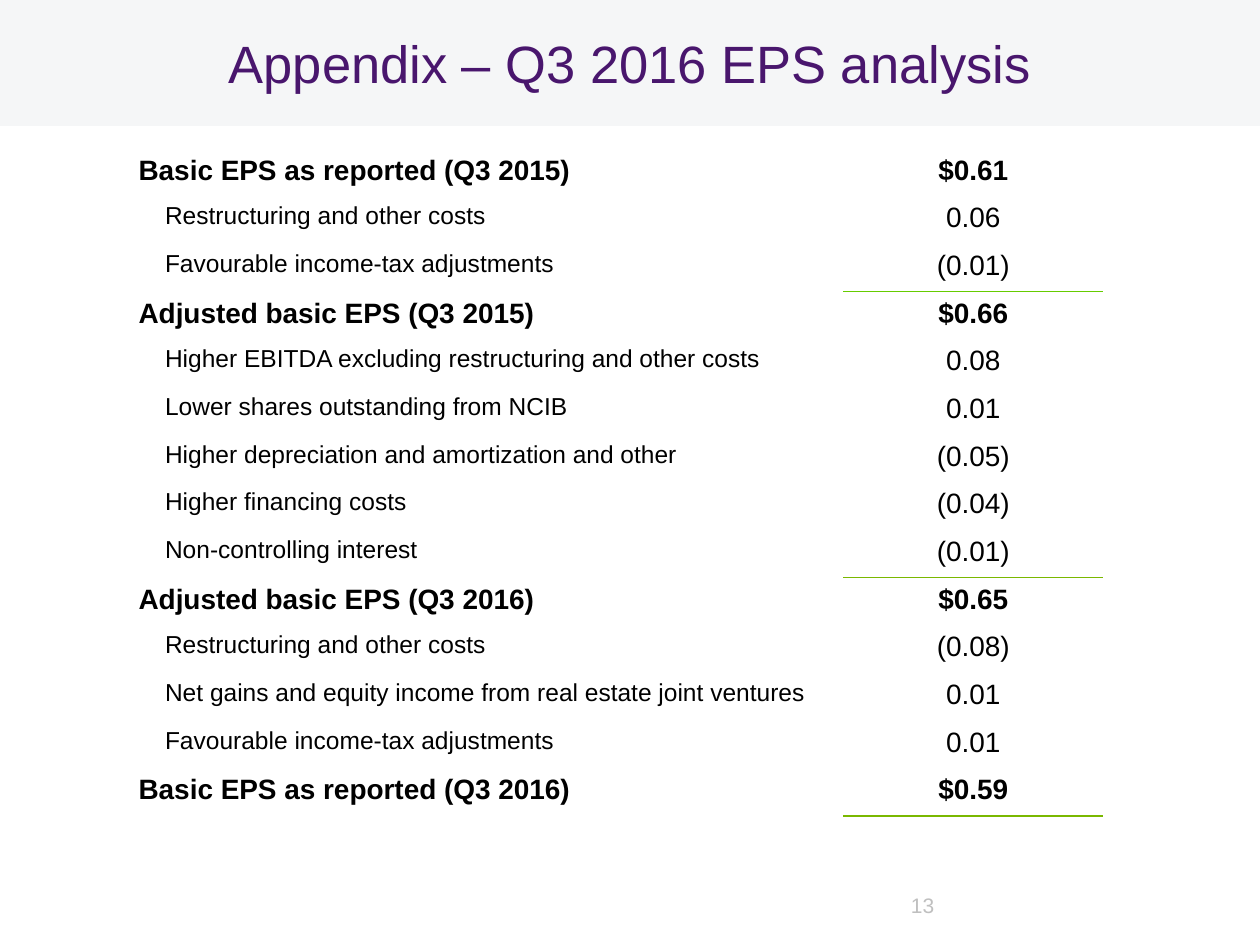
from lxml import etree
from pptx import Presentation
from pptx.dml.color import RGBColor
from pptx.enum.shapes import MSO_SHAPE
from pptx.enum.text import MSO_ANCHOR, PP_ALIGN
from pptx.oxml.ns import qn
from pptx.util import Inches, Pt

RECT = MSO_SHAPE.RECTANGLE
MIDDLE = MSO_ANCHOR.MIDDLE
LEFT, CENTER = PP_ALIGN.LEFT, PP_ALIGN.CENTER

ROWS = [
    ("Basic EPS as reported (Q3 2015)", "$0.61", True),
    ("Restructuring and other costs", "0.06", False),
    ("Favourable income-tax adjustments", "(0.01)", False),
    ("Adjusted basic EPS (Q3 2015)", "$0.66", True),
    ("Higher EBITDA excluding restructuring and other costs", "0.08", False),
    ("Lower shares outstanding from NCIB", "0.01", False),
    ("Higher depreciation and amortization and other", "(0.05)", False),
    ("Higher financing costs", "(0.04)", False),
    ("Non-controlling interest", "(0.01)", False),
    ("Adjusted basic EPS (Q3 2016)", "$0.65", True),
    ("Restructuring and other costs", "(0.08)", False),
    ("Net gains and equity income from real estate joint ventures", "0.01", False),
    ("Favourable income-tax adjustments", "0.01", False),
    ("Basic EPS as reported (Q3 2016)", "$0.59", True),
]
RULES = {2: "66CC00", 8: "7AB800", 13: "7AB800"}


def color(code):
    """Turn a hex string into a colour."""
    return RGBColor.from_string(code)


class Deck:
    """Draws styled elements on a grid of 100 columns by 75 rows."""

    font = "Arial"
    ink = "000000"
    paper = "FFFFFF"

    def __init__(self):
        """Start a deck with one blank slide."""
        self.prs = Presentation()
        self.prs.slide_width, self.prs.slide_height = Inches(10), Inches(7.5)
        self.slide = self.prs.slides.add_slide(self.prs.slide_layouts[6])

    def span(self, cols):
        """Give the length of a number of grid steps."""
        return int(self.prs.slide_width * cols / 100)

    def text(self, frame, words, size, ink, align=LEFT, bold=False):
        """Put one styled paragraph in a text frame."""
        para = frame.paragraphs[0]
        para.text, para.alignment = words, align
        para.font.name, para.font.size = self.font, Pt(size)
        para.font.bold, para.font.color.rgb = bold, color(ink)

    def center(self, frame):
        """Wrap a frame, drop its margins and anchor it in the middle."""
        frame.word_wrap, frame.vertical_anchor = True, MIDDLE
        frame.margin_left = frame.margin_right = 0
        frame.margin_top = frame.margin_bottom = 0

    def title(self, box, words, fill, ink):
        """Add a filled title band."""
        band = self.slide.shapes.add_shape(RECT, *map(self.span, box))
        band.shadow.inherit = False
        band.fill.solid()
        band.fill.fore_color.rgb = color(fill)
        band.line.fill.background()
        self.center(band.text_frame)
        self.text(band.text_frame, words, 30, ink, CENTER)

    def label(self, box, words, size, ink):
        """Add a plain text box."""
        frame = self.slide.shapes.add_textbox(*map(self.span, box)).text_frame
        self.center(frame)
        self.text(frame, words, size, ink)

    def edge(self, cell, side, ink):
        """Draw a one-point border on one side of a cell."""
        line = etree.Element(qn("a:" + side), w=str(Pt(1)))
        fill = etree.SubElement(line, qn("a:solidFill"))
        etree.SubElement(fill, qn("a:srgbClr"), val=ink)
        cell._tc.get_or_add_tcPr().insert(0, line)

    def table(self, box, widths, rows, rules):
        """Add a ledger with indented items and ruled totals."""
        shape = self.slide.shapes.add_table(len(rows), len(widths), *map(self.span, box))
        grid = shape.table
        grid.first_row = grid.horz_banding = False
        for col, width in zip(grid.columns, widths):
            col.width = self.span(width)
        for row, (name, value, bold) in enumerate(rows):
            grid.rows[row].height = self.span(box[3] / len(rows))
            item, amount = grid.cell(row, 0), grid.cell(row, 1)
            for cell in (item, amount):
                cell.fill.solid()
                cell.fill.fore_color.rgb = color(self.paper)
            item.margin_left = self.span(1 if bold else 3.1)
            self.text(item.text_frame, name, 16 if bold else 14, self.ink, LEFT, bold)
            self.text(amount.text_frame, value, 16, self.ink, CENTER, bold)
        for row, ink in rules.items():
            self.edge(grid.cell(row, 1), "lnB", ink)
            if row + 1 < len(rows):
                self.edge(grid.cell(row + 1, 1), "lnT", ink)


def main():
    """Build the slide."""
    deck = Deck()
    deck.title((0, 0, 100, 10), "Appendix – Q3 2016 EPS analysis", "F5F6F7", "49166D")
    deck.label((72.3, 68.6, 23.6, 6.4), "13", 12, "BFBFBF")
    deck.table((10, 11.8, 77.5, 53), (57, 20.5), ROWS, RULES)
    deck.prs.save("out.pptx")


if __name__ == "__main__":
    main()
